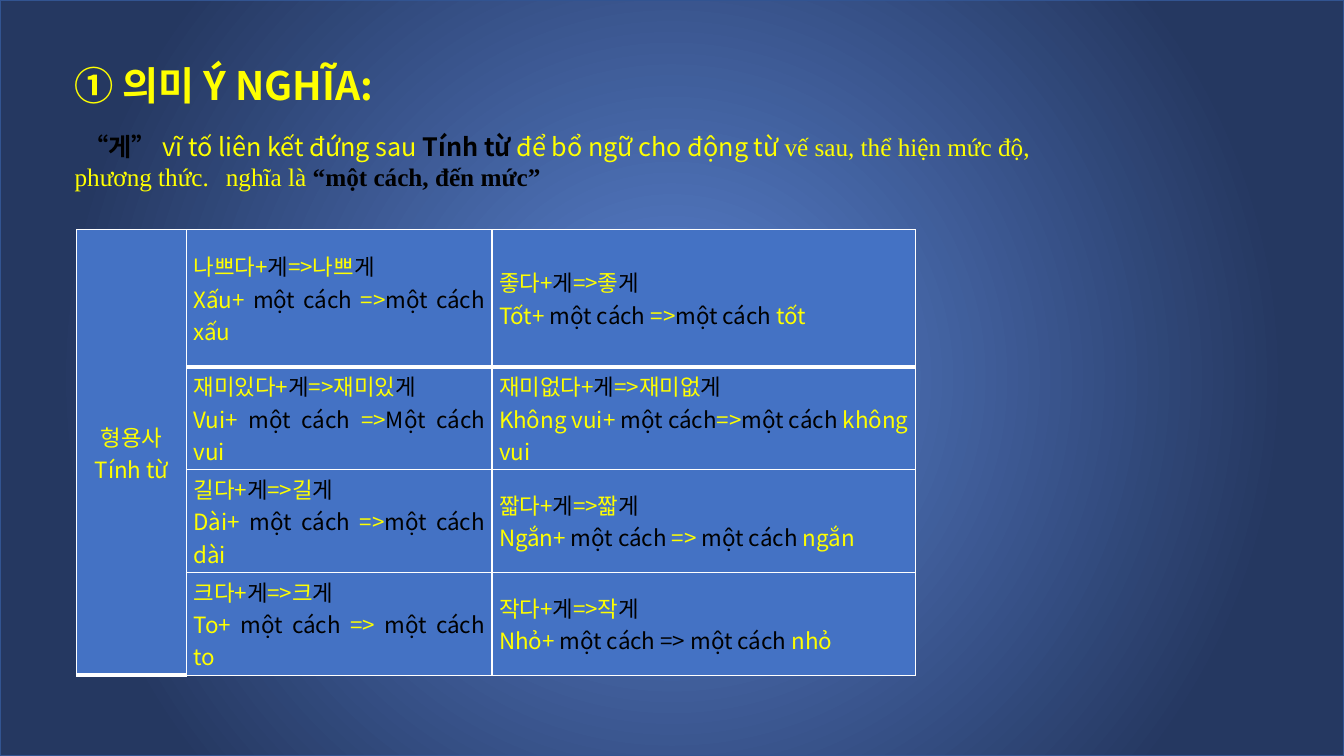
from dataclasses import dataclass

from lxml import etree
from pptx import Presentation
from pptx.dml.color import RGBColor
from pptx.enum.shapes import MSO_SHAPE
from pptx.enum.text import MSO_ANCHOR, MSO_AUTO_SIZE, PP_ALIGN
from pptx.oxml.ns import qn
from pptx.util import Inches, Pt

RECT = MSO_SHAPE.RECTANGLE
TOP, MIDDLE = MSO_ANCHOR.TOP, MSO_ANCHOR.MIDDLE
LEFT, CENTER, JUSTIFY = PP_ALIGN.LEFT, PP_ALIGN.CENTER, PP_ALIGN.JUSTIFY
FIT_SHAPE = MSO_AUTO_SIZE.SHAPE_TO_FIT_TEXT

SANS, SERIF = "Noto Sans CJK KR", "Times New Roman"
YELLOW, BLACK, WHITE, BLUE = "FFFF00", "000000", "FFFFFF", "4472C4"
COL_WIDTHS = (1.09, 3.03, 4.2)
ROW_HEIGHTS = (1.36, 1.02, 1.02, 1.02)


@dataclass
class Piece:
    text: str
    color: str = YELLOW
    size: float = 18
    bold: bool = False
    font: str = SANS


@dataclass
class Example:
    """An adjective stem and its gloss, whose parts alternate yellow and black."""
    stem: str
    gloss: tuple[str, ...]


EXAMPLES = (
    (Example("나쁘", ("Xấu+", " một cách ", "=>", "một cách ", "xấu")),
     Example("좋", ("Tốt+", " một cách ", "=>", "một cách ", "tốt"))),
    (Example("재미있", ("Vui+", " một cách ", "=>", "Một cách ", "vui")),
     Example("재미없", ("Không vui+ ", "một cách", "=>", "một cách ", "không vui"))),
    (Example("길", ("Dài+", " một cách ", "=>", "một cách ", "dài")),
     Example("짧", ("Ngắn+", " một cách ", "=>", " một cách ", "ngắn"))),
    (Example("크", ("To+", " một cách ", "=>", " một cách ", "to")),
     Example("작", ("Nhỏ+", " một cách => một cách ", "nhỏ"))),
)

HEADING = [Piece("① 의미 Ý NGHĨA:", size=28, bold=True), Piece(" ", bold=True)]
MEANING = [
    Piece(" ", BLACK, 28),
    Piece("“게”", BLACK, bold=True),
    Piece(" vĩ tố liên kết đứng sau "),
    Piece("Tính từ ", BLACK, bold=True),
    Piece("để bổ ngữ cho động từ "),
    Piece("vế sau, thể hiện mức độ, phương thức.\tnghĩa là ", font=SERIF),
    Piece("“một cách, đến mức”", BLACK, bold=True, font=SERIF),
]


def rgb(color: str) -> RGBColor:
    return RGBColor.from_string(color)


def write(p, pieces: list[Piece], **paragraph_format) -> None:
    for name, value in paragraph_format.items():
        setattr(p, name, value)
    for piece in pieces:
        r = p.add_run()
        r.text = piece.text
        r.font.color.rgb = rgb(piece.color)
        values = {"size": Pt(piece.size), "bold": piece.bold, "name": piece.font}
        for name, value in values.items():
            setattr(r.font, name, value)
        latin = r.font._element.find(qn("a:latin"))
        latin.addnext(latin.makeelement(qn("a:ea"), {"typeface": piece.font}))


def alternate(parts: tuple[str, ...]) -> list[Piece]:
    return [Piece(part, (YELLOW, BLACK)[i % 2], 16) for i, part in enumerate(parts)]


def set_borders(cell, widths: dict[str, float]) -> None:
    tc_pr = cell._tc.get_or_add_tcPr()
    for i, (side, width) in enumerate(widths.items()):
        ln = etree.Element(qn(f"a:ln{side}"), w=str(Pt(width)))
        fill = etree.SubElement(ln, qn("a:solidFill"))
        etree.SubElement(fill, qn("a:srgbClr"), val=WHITE)
        tc_pr.insert(i, ln)


def fill_cell(cell, lines: list[list[Piece]], align) -> None:
    values = {"vertical_anchor": MIDDLE, "margin_left": Inches(0.07),
              "margin_right": Inches(0.07), "margin_top": 0, "margin_bottom": 0}
    for name, value in values.items():
        setattr(cell, name, value)
    tf = cell.text_frame
    for i, line in enumerate(lines):
        write(tf.add_paragraph() if i else tf.paragraphs[0], line, alignment=align)


def add_background(slide, width: int, height: int) -> None:
    sp = slide.shapes.add_shape(RECT, 0, 0, width, height)
    sp.shadow.inherit = False
    sp.line.color.rgb = rgb("325491")
    sp.line.width = Pt(1)
    sp.fill.gradient()
    for stop, color, position in zip(sp.fill.gradient_stops, ("5A83D3", "253861"), (0, 0.8)):
        stop.color.rgb = rgb(color)
        stop.position = position
    # Radial shading from the centre
    grad = sp._element.spPr.find(qn("a:gradFill"))
    grad.remove(grad.find(qn("a:lin")))
    shade = etree.SubElement(grad, qn("a:path"), {"path": "circle"})
    etree.SubElement(shade, qn("a:fillToRect"), dict.fromkeys("ltrb", "50000"))


def write_explanation(body) -> None:
    box = {"left": 0.64, "top": 0.61, "width": 10.3, "height": 1.38}
    for name, value in box.items():
        setattr(body, name, Inches(value))
    tf = body.text_frame
    tf.word_wrap = True
    tf.vertical_anchor = TOP
    tf.auto_size = FIT_SHAPE
    spacing = {"alignment": LEFT, "line_spacing": 0.9, "space_before": Pt(10)}
    write(tf.paragraphs[0], HEADING, **spacing)
    p = tf.add_paragraph()
    write(p, MEANING, **spacing)
    # Tab stop for the gap on the second line
    tabs = etree.SubElement(p._p.get_or_add_pPr(), qn("a:tabLst"))
    etree.SubElement(tabs, qn("a:tab"), pos=str(Inches(1.77)), algn="l")


def add_examples(slide) -> None:
    frame = slide.shapes.add_table(
        len(ROW_HEIGHTS), len(COL_WIDTHS), Inches(0.76), Inches(2.28),
        Inches(sum(COL_WIDTHS)), Inches(sum(ROW_HEIGHTS)))
    table = frame.table
    table.first_row = table.horz_banding = False
    for column, width in zip(table.columns, COL_WIDTHS):
        column.width = Inches(width)
    for row, height in zip(table.rows, ROW_HEIGHTS):
        row.height = Inches(height)

    # Fills and borders, with a heavier rule under the first row
    for i, row in enumerate(table.rows):
        for cell in row.cells:
            cell.fill.solid()
            cell.fill.fore_color.rgb = rgb(BLUE)
            borders = {"L": 1, "R": 1, "T": 1, "B": 3} if i == 0 else {"L": 1, "R": 1, "B": 1}
            set_borders(cell, borders)

    # Word class, then the pairs of examples
    table.cell(0, 0).merge(table.cell(len(ROW_HEIGHTS) - 1, 0))
    fill_cell(table.cell(0, 0), [alternate(("형용사",)), alternate(("Tính từ",))], CENTER)
    for i, pair in enumerate(EXAMPLES):
        for j, example in enumerate(pair, start=1):
            korean = (f"{example.stem}다+", "게", f"=>{example.stem}", "게")
            fill_cell(table.cell(i, j), [alternate(korean), alternate(example.gloss)], JUSTIFY)


def main() -> None:
    prs = Presentation()
    prs.slide_width, prs.slide_height = Inches(13.33), Inches(7.5)
    # The section layout has a text placeholder without bullets
    slide = prs.slides.add_slide(prs.slide_layouts[2])
    title, body = slide.placeholders
    title._element.getparent().remove(title._element)
    add_background(slide, prs.slide_width, prs.slide_height)
    # Bring the text in front of the background
    slide.shapes._spTree.append(body._element)
    write_explanation(body)
    add_examples(slide)
    prs.save("out.pptx")


if __name__ == "__main__":
    main()
